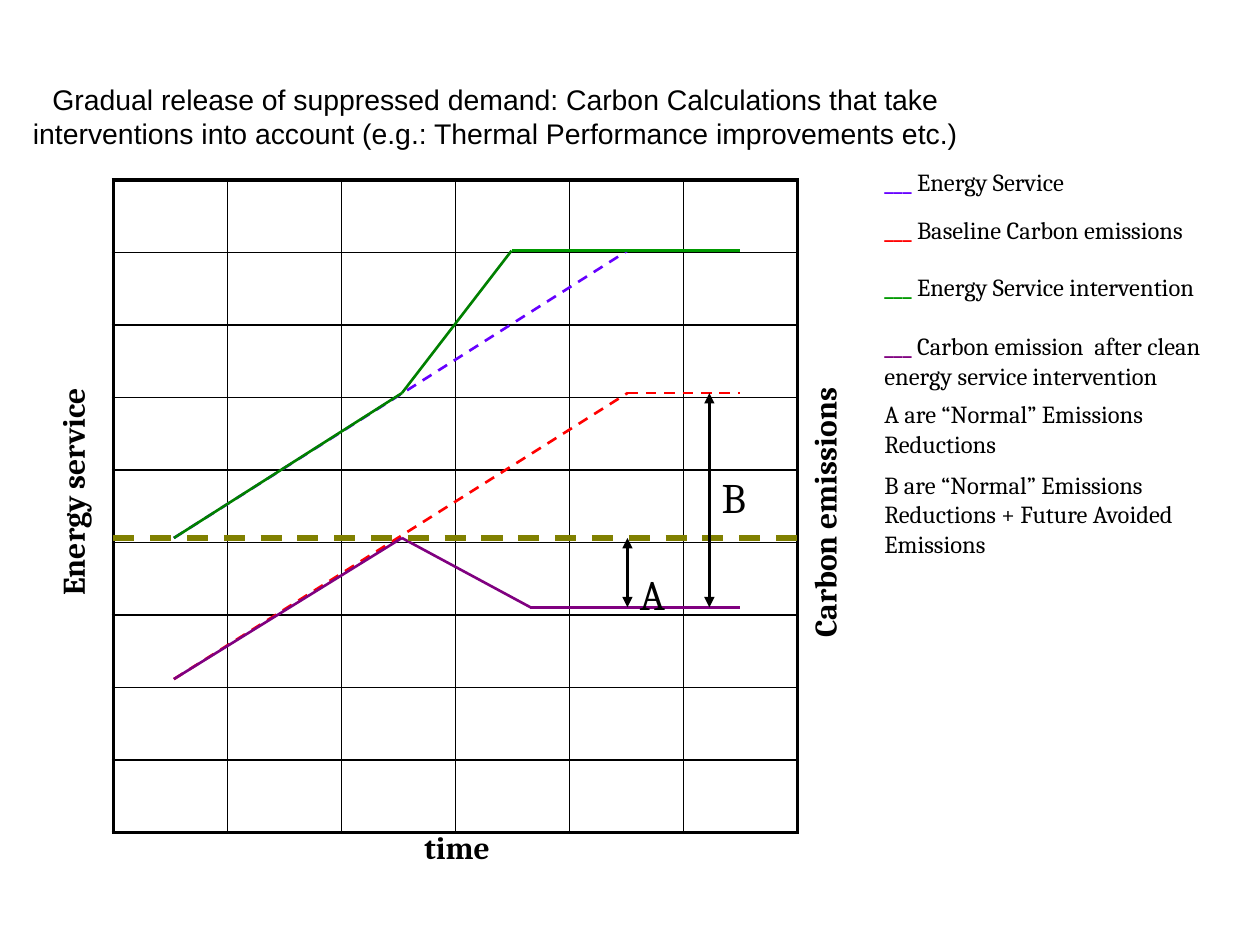
from dataclasses import dataclass
from itertools import pairwise

from lxml import etree
from pptx import Presentation
from pptx import util as u
from pptx.dml.color import RGBColor
from pptx.enum import dml, shapes, text
from pptx.oxml.ns import qn

COLORS = {
    "black": "000000",
    "violet": "6600FF",
    "red": "FF0000",
    "light green": "009900",
    "green": "008000",
    "purple": "800080",
    "olive": "808000",
}
ROWS, COLUMNS = 9, 6
GRID_LEFT, GRID_TOP, GRID_WIDTH, GRID_HEIGHT = 0.9, 1.43, 5.43, 5.18
LEGEND_LEFT = 6.92
# Heights of the chart levels and times at which the curves bend
FULL_SERVICE, FULL_EMISSIONS, BASELINE, REDUCED, LOWEST = 1.99, 3.12, 4.27, 4.82, 5.39
START, INTERVENTION, SATURATION, END = 1.38, 3.19, 4.98, 5.87


@dataclass
class Curve:
    color: str
    points: list[tuple[float, float]]
    dashed: bool = False
    width: float = 1.5
    arrows: bool = False


@dataclass
class Label:
    words: str
    left: float
    top: float
    width: float
    height: float
    size: float = 14
    bold: bool = False
    rotation: float = 0
    key_color: str = ""


CURVES = [
    Curve("violet", [(START, BASELINE), (SATURATION, FULL_SERVICE), (END, FULL_SERVICE)], True),
    Curve("red", [(START, LOWEST), (SATURATION, FULL_EMISSIONS), (END, FULL_EMISSIONS)], True),
    Curve("green", [(START, BASELINE), (INTERVENTION, FULL_EMISSIONS), (4.06, FULL_SERVICE)]),
    Curve("light green", [(4.06, FULL_SERVICE), (END, FULL_SERVICE)]),
    Curve("purple", [(START, LOWEST), (INTERVENTION, BASELINE), (4.21, REDUCED), (END, REDUCED)]),
    Curve("olive", [(GRID_LEFT, BASELINE), (GRID_LEFT + GRID_WIDTH, BASELINE)], True, 3),
    Curve("black", [(SATURATION, BASELINE), (SATURATION, REDUCED)], arrows=True),
    Curve("black", [(5.63, FULL_EMISSIONS), (5.63, REDUCED)], arrows=True),
]
LABELS = [
    Label("Energy service", -0.63, 3.42, 2.41, 0.4, 18, True, 270),
    Label("Carbon emissions", 5.25, 3.67, 2.58, 0.4, 18, True, 270),
    Label("time", 3.27, 6.52, 0.79, 0.4, 18, True),
    Label("A", 4.98, 4.46, 0.45, 0.33, 24),
    Label("B", 5.63, 3.69, 0.24, 0.33, 24),
    Label(" Energy Service", LEGEND_LEFT, 1.28, 2.89, 0.34, key_color="violet"),
    Label(" Baseline Carbon emissions", LEGEND_LEFT, 1.66, 3.08, 0.34, key_color="red"),
    Label(" Energy Service intervention", LEGEND_LEFT, 2.11, 2.89, 0.34, key_color="light green"),
    Label(" Carbon emission  after clean energy service intervention",
          LEGEND_LEFT, 2.58, 2.92, 0.57, key_color="purple"),
    Label("A are “Normal” Emissions Reductions", LEGEND_LEFT, 3.12, 2.67, 0.57),
    Label("B are “Normal” Emissions Reductions + Future Avoided Emissions",
          LEGEND_LEFT, 3.68, 3.08, 0.81),
]


def rgb(name: str) -> RGBColor:
    return RGBColor.from_string(COLORS[name])


def format_run(run, font_name: str, size: float, color: str, bold: bool = False) -> None:
    run.font.name = font_name
    run.font.size = u.Pt(size)
    run.font.bold = bold
    run.font.color.rgb = rgb(color)


def add_title(slide, words: str) -> None:
    title = slide.shapes.title
    title.left, title.top = u.Inches(0.11), u.Inches(0.44)
    title.width, title.height = u.Inches(7.64), u.Inches(0.97)
    frame = title.text_frame
    frame.text = words
    frame.word_wrap = True
    frame.auto_size = text.MSO_AUTO_SIZE.NONE
    frame.vertical_anchor = text.MSO_ANCHOR.MIDDLE
    paragraph = frame.paragraphs[0]
    paragraph.alignment = text.PP_ALIGN.CENTER
    format_run(paragraph.runs[0], "Arial", 16.2, "black")


def set_border(cell, side: str, width: float) -> None:
    line = etree.SubElement(cell._tc.get_or_add_tcPr(), qn(f"a:ln{side}"), w=str(u.Pt(width)))
    fill = etree.SubElement(line, qn("a:solidFill"))
    etree.SubElement(fill, qn("a:srgbClr"), val=COLORS["black"])


def add_grid(slide) -> None:
    """Add the empty table that serves as chart grid, with a heavier outer frame."""
    table = slide.shapes.add_table(
        ROWS, COLUMNS, u.Inches(GRID_LEFT), u.Inches(GRID_TOP),
        u.Inches(GRID_WIDTH), u.Inches(GRID_HEIGHT)).table
    table.first_row = table.horz_banding = False
    for row in range(ROWS):
        for column in range(COLUMNS):
            cell = table.cell(row, column)
            on_frame = {"L": column == 0, "R": column == COLUMNS - 1,
                        "T": row == 0, "B": row == ROWS - 1}
            for side, outer in on_frame.items():
                set_border(cell, side, 2.25 if outer else 1)
            cell.fill.background()


def add_curve(slide, curve: Curve) -> None:
    for start, end in pairwise(curve.points):
        connector = slide.shapes.add_connector(
            shapes.MSO_CONNECTOR.STRAIGHT, *(u.Inches(value) for value in start + end))
        connector.line.color.rgb = rgb(curve.color)
        connector.line.width = u.Pt(curve.width)
        if curve.dashed:
            connector.line.dash_style = dml.MSO_LINE.DASH
        if curve.arrows:
            for tag in ("a:headEnd", "a:tailEnd"):
                etree.SubElement(connector.line._get_or_add_ln(), qn(tag), type="triangle")
        etree.SubElement(connector._element.spPr, qn("a:effectLst"))


def add_label(slide, label: Label) -> None:
    box = slide.shapes.add_textbox(
        u.Inches(label.left), u.Inches(label.top), u.Inches(label.width), u.Inches(label.height))
    box.rotation = label.rotation
    box.text_frame.word_wrap = True
    paragraph = box.text_frame.paragraphs[0]
    if label.key_color:
        key = paragraph.add_run()
        key.text = "___"
        format_run(key, "Cambria", label.size, label.key_color, True)
    run = paragraph.add_run()
    run.text = label.words
    format_run(run, "Cambria", label.size, "black", label.bold)


def main() -> None:
    presentation = Presentation()
    presentation.slide_width, presentation.slide_height = u.Inches(10), u.Inches(7.5)
    slide = presentation.slides.add_slide(presentation.slide_layouts.get_by_name("Title Only"))
    add_title(slide, "Gradual release of suppressed demand: Carbon Calculations that take "
                     "interventions into account (e.g.: Thermal Performance improvements etc.)")
    add_grid(slide)
    for curve in CURVES:
        add_curve(slide, curve)
    for label in LABELS:
        add_label(slide, label)
    presentation.save("out.pptx")


if __name__ == "__main__":
    main()
